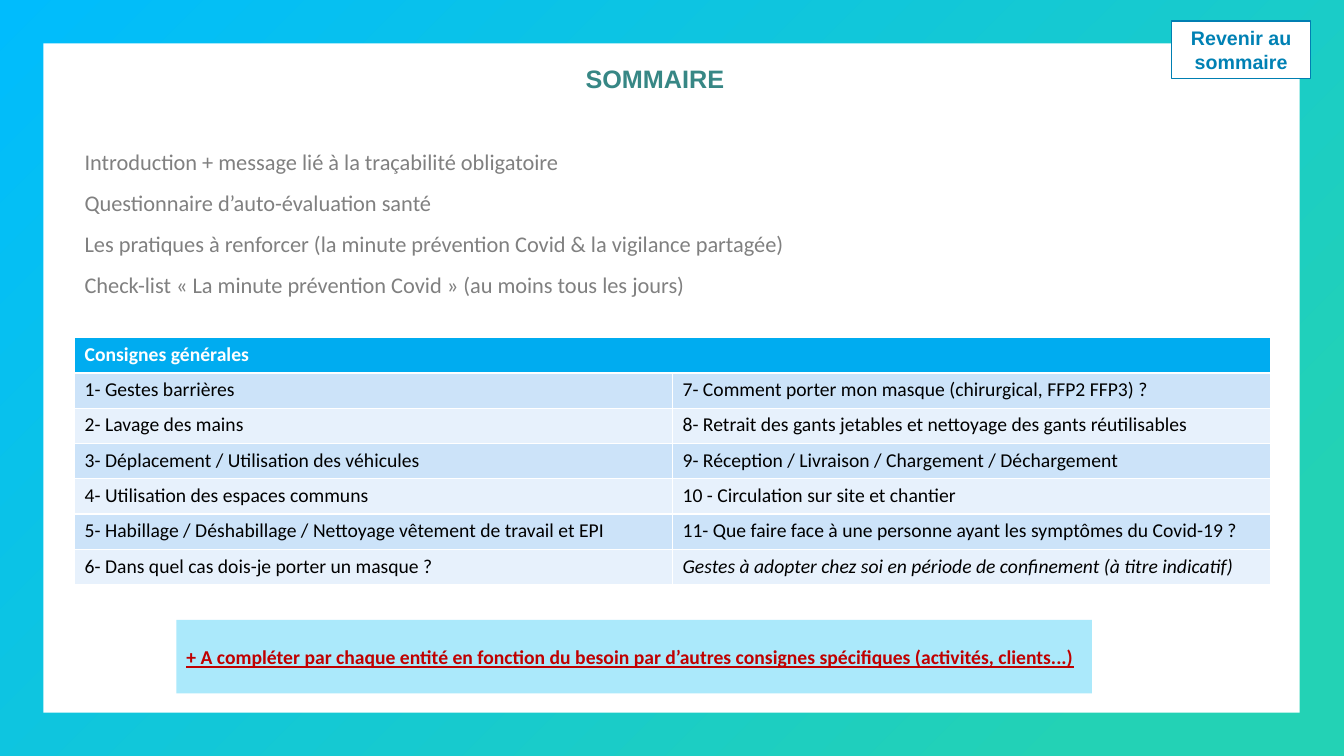
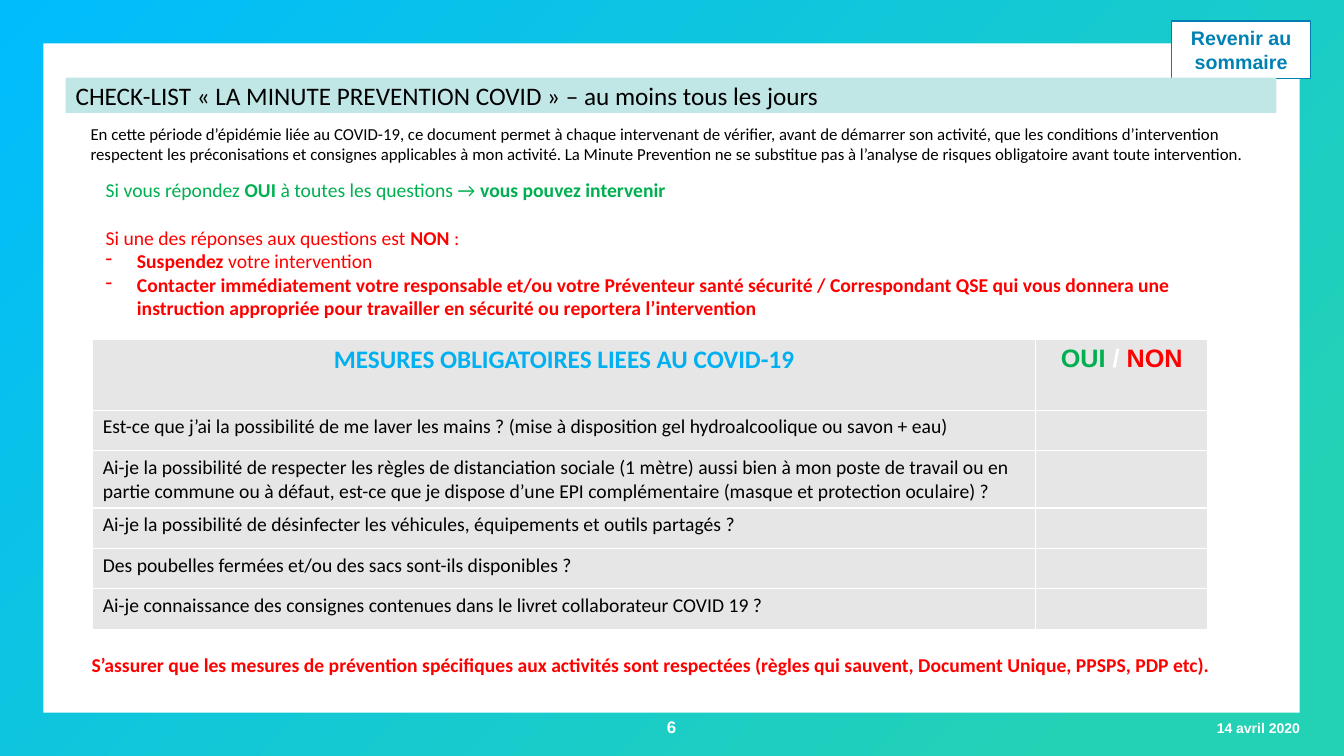
import pptx
import pptx.dml.color
import pptx.enum.shapes
import pptx.enum.text
import pptx.oxml
import pptx.oxml.ns
import pptx.util

Inches = pptx.util.Inches
RGBColor = pptx.dml.color.RGBColor
ALIGN = pptx.enum.text.PP_ALIGN
ANCHOR = pptx.enum.text.MSO_ANCHOR
qn = pptx.oxml.ns.qn
NS = pptx.oxml.ns.nsdecls("a")

BLACK = RGBColor(0x00, 0x00, 0x00)
WHITE = RGBColor(0xFF, 0xFF, 0xFF)
GREY = RGBColor(0x80, 0x80, 0x80)
LIGHT_GREY = RGBColor(0xE7, 0xE6, 0xE6)
FRAME_GREEN = RGBColor(0x23, 0xD2, 0xB5)
FRAME_BLUE = RGBColor(0x00, 0xBC, 0xFD)
BUTTON_LINE = RGBColor(0x00, 0x7F, 0xB2)
BUTTON_TEXT = RGBColor(0x00, 0x81, 0xB4)
TITLE_TEAL = RGBColor(0x37, 0x87, 0x85)
BAND_TEAL = RGBColor(0xC0, 0xE7, 0xE6)
HEADER_BLUE = RGBColor(0x00, 0xAC, 0xF0)
ROW_BLUES = [RGBColor(0xCC, 0xE3, 0xF9), RGBColor(0xE7, 0xF1, 0xFC)]
CALLOUT_BLUE = RGBColor(0x00, 0xBE, 0xF4)
CALLOUT_RED = RGBColor(0xC0, 0x00, 0x00)
HEADING_BLUE = RGBColor(0x00, 0xB0, 0xF0)
GREEN = RGBColor(0x00, 0xB0, 0x50)
RED = RGBColor(0xFF, 0x00, 0x00)


def write(para, text, size=14, font="Calibri", color=BLACK, bold=False, italic=False,
          underline=False, align=ALIGN.LEFT):
    """Add one formatted span to a paragraph."""
    para.alignment = align
    span = para.add_run()
    span.text = text
    span.font.size = pptx.util.Pt(size)
    span.font.name = font
    span.font.color.rgb = color
    span.font.bold = bold
    span.font.italic = italic
    span.font.underline = underline


class StyledDeck:
    """Hold the shared style and the slide being built."""

    def __init__(self):
        """Open a deck and draw the frame on its title-only layout."""
        self.deck = pptx.Presentation()
        self.deck.slide_width = Inches(13.33)
        self.deck.slide_height = Inches(7.5)
        self.layout = self.deck.slide_layouts[5]
        self.page = None

    def new_page(self):
        """Start a slide, moving the frame to the layout the first time."""
        self.page = self.deck.slides.add_slide(self.layout)
        if len(self.deck.slides) == 1:
            self.draw_frame()

    def draw_frame(self):
        """Put the gradient, white panel and button on the layout."""
        border = self.rectangle(0, 0, 13.33, 7.5, FRAME_BLUE)
        border.fill.gradient()
        stops = border.fill.gradient_stops
        for stop, position, color in zip(stops, (0.13, 1), (FRAME_GREEN, FRAME_BLUE)):
            stop.position = position
            stop.color.rgb = color
        gradient = border.element.spPr.find(qn("a:gradFill"))
        gradient.remove(gradient.find(qn("a:lin")))
        gradient.append(pptx.oxml.parse_xml(
            f'<a:path {NS} path="circle"><a:fillToRect l="100000" t="100000"/></a:path>'))
        panel = self.rectangle(0.43, 0.43, 12.46, 6.64, WHITE)
        button = self.rectangle(11.62, 0.21, 1.38, 0.57, WHITE)
        button.line.color.rgb = BUTTON_LINE
        button.line.width = pptx.util.Pt(1)
        write(button.text_frame.paragraphs[0], "Revenir au sommaire", font="Arial",
              color=BUTTON_TEXT, bold=True, align=ALIGN.CENTER)
        for index, shape in enumerate((border, panel, button)):
            shape.element.nvSpPr.cNvPr.set("id", str(101 + index))
            self.layout.shapes.element.insert(2 + index, shape.element)

    def rectangle(self, left, top, width, height, color, opacity=None):
        """Add a plain filled rectangle."""
        box = self.page.shapes.add_shape(
            pptx.enum.shapes.MSO_SHAPE.RECTANGLE,
            Inches(left), Inches(top), Inches(width), Inches(height))
        box.shadow.inherit = False
        box.fill.solid()
        box.fill.fore_color.rgb = color
        box.line.fill.background()
        box.text_frame.word_wrap = True
        box.text_frame.vertical_anchor = ANCHOR.MIDDLE
        if opacity is not None:
            tint = box.element.spPr.find(qn("a:solidFill"))[0]
            tint.append(pptx.oxml.parse_xml(f'<a:alpha {NS} val="{opacity * 1000}"/>'))
        return box

    def title(self, text, left, top, width, height, fill=None, anchor=ANCHOR.TOP, **style):
        """Place and format the title, with an optional band."""
        box = self.page.shapes.title
        box.left, box.top = Inches(left), Inches(top)
        box.width, box.height = Inches(width), Inches(height)
        if fill is not None:
            box.fill.solid()
            box.fill.fore_color.rgb = fill
        frame = box.text_frame
        frame.word_wrap = True
        frame.auto_size = pptx.enum.text.MSO_AUTO_SIZE.NONE
        frame.vertical_anchor = anchor
        write(frame.paragraphs[0], text, size=18, **style)

    def text(self, lines, left, top, width, height, before=0, anchor=ANCHOR.TOP, **style):
        """Add a text box; a line is a string or a list of (text, style) spans."""
        box = self.page.shapes.add_textbox(
            Inches(left), Inches(top), Inches(width), Inches(height))
        frame = box.text_frame
        frame.word_wrap = True
        frame.vertical_anchor = anchor
        for index, line in enumerate(lines):
            para = frame.paragraphs[0] if index == 0 else frame.add_paragraph()
            if index and before:
                para.space_before = pptx.util.Pt(before)
            self.spans(para, line, **style)
        return frame.paragraphs

    def spans(self, para, line, **style):
        """Write a line, letting each span override the common style."""
        for text, override in [(line, {})] if isinstance(line, str) else line:
            write(para, text, **{**style, **override})

    def bullet(self, para, mark="-", indent=0.31):
        """Give a paragraph a hanging bullet."""
        properties = para._p.get_or_add_pPr()
        properties.set("marL", str(Inches(indent)))
        properties.set("indent", str(-Inches(indent)))
        properties.append(pptx.oxml.parse_xml(f'<a:buChar {NS} char="{mark}"/>'))

    def table(self, rows, left, top, widths, heights, header_fill, row_fills):
        """Add a table with a header fill and cycling row fills."""
        table = self.page.shapes.add_table(
            len(rows), len(widths), Inches(left), Inches(top),
            Inches(sum(widths)), Inches(sum(heights))).table
        for column, width in zip(table.columns, widths):
            column.width = Inches(width)
        for row, height in zip(table.rows, heights):
            row.height = Inches(height)
        for number, lines in enumerate(rows):
            fill = row_fills[(number - 1) % len(row_fills)] if number else header_fill
            for cell, line in zip(table.rows[number].cells, lines):
                cell.fill.solid()
                cell.fill.fore_color.rgb = fill
                if line:
                    self.spans(cell.text_frame.paragraphs[0], line)
        return table

    def footer(self, number, date):
        """Add the page number and date below the panel."""
        common = {"font": "Arial", "color": WHITE, "bold": True, "anchor": ANCHOR.MIDDLE}
        self.text([date], 7.38, 7.09, 5.61, 0.27, size=10, align=ALIGN.RIGHT, **common)
        self.text([number], 5.16, 7.06, 3, 0.31, size=12, align=ALIGN.CENTER, **common)


def build_summary(deck):
    """Build the table of contents slide."""
    deck.new_page()
    deck.title("SOMMAIRE", 0.49, 0.58, 12.01, 0.39, font="Arial", color=TITLE_TEAL,
               bold=True, align=ALIGN.CENTER)
    deck.text([
        "Introduction + message lié à la traçabilité obligatoire",
        "Questionnaire d’auto-évaluation santé",
        "Les pratiques à renforcer (la minute prévention Covid & la vigilance partagée)",
        "Check-list « La minute prévention Covid » (au moins tous les jours)",
    ], 0.74, 1.42, 10.09, 1.6, before=10, size=16, color=GREY)
    rows = [
        ([("Consignes générales", {"color": WHITE, "bold": True})], ""),
        ("1- Gestes barrières", "7- Comment porter mon masque (chirurgical, FFP2 FFP3) ?"),
        ("2- Lavage des mains",
         "8- Retrait des gants jetables et nettoyage des gants réutilisables"),
        ("3- Déplacement / Utilisation des véhicules",
         "9- Réception / Livraison / Chargement / Déchargement"),
        ("4- Utilisation des espaces communs", "10 - Circulation sur site et chantier"),
        ("5- Habillage / Déshabillage / Nettoyage vêtement de travail et EPI",
         "11- Que faire face à une personne ayant les symptômes du Covid-19 ?"),
        ("6- Dans quel cas dois-je porter un masque ?",
         [("Gestes à adopter chez soi en période de confinement (à titre indicatif)",
           {"italic": True})]),
    ]
    table = deck.table(rows, 0.74, 3.35, [5.93] * 2, [0.35] * 7, HEADER_BLUE, ROW_BLUES)
    table.cell(0, 0).merge(table.cell(0, 1))
    callout = deck.rectangle(1.75, 6.15, 9.08, 0.73, CALLOUT_BLUE, opacity=33)
    write(callout.text_frame.paragraphs[0],
          "+ A compléter par chaque entité en fonction du besoin par d’autres consignes "
          "spécifiques (activités, clients...)",
          color=CALLOUT_RED, bold=True, underline=True)


def build_checklist(deck):
    """Build the daily checklist slide."""
    bold = {"bold": True}
    red = {"color": RED}
    red_bold = {**red, **bold}
    deck.new_page()
    deck.title("CHECK-LIST « LA MINUTE PREVENTION COVID » – au moins tous les jours",
               0.65, 0.77, 12.01, 0.35, fill=BAND_TEAL, anchor=ANCHOR.MIDDLE)
    deck.text([
        "En cette période d’épidémie liée au COVID-19, ce document permet à chaque intervenant "
        "de vérifier, avant de démarrer son activité, que les conditions d’intervention "
        "respectent les préconisations et consignes applicables à mon activité. La Minute "
        "Prevention ne se substitue pas à l’analyse de risques obligatoire avant toute "
        "intervention."], 0.8, 1.18, 11.7, 0.5, size=12)
    paras = deck.text([
        [("Si vous répondez", {}), (" OUI ", bold), ("à toutes les questions → ", {}),
         ("vous pouvez intervenir", bold)],
        [("Si une des réponses aux questions est ", red), ("NON", red_bold), (" :", red)],
        [("Suspendez ", red_bold), ("votre intervention", red)],
        [("Contacter immédiatement votre responsable et/ou votre Préventeur santé sécurité / "
          "Correspondant QSE qui vous donnera une instruction appropriée pour travailler en "
          "sécurité ou reportera l’intervention", red_bold)],
    ], 0.95, 1.72, 11.17, 1.51, color=GREEN)
    paras[1].space_before = pptx.util.Pt(17)
    for para in paras[2:]:
        deck.bullet(para)
    heading = {"size": 18, "bold": True, "align": ALIGN.CENTER}
    answer = {**heading, "font": "Arial"}
    questions = [
        "Est-ce que j’ai la possibilité de me laver les mains ? (mise à disposition gel "
        "hydroalcoolique ou savon + eau)",
        "Ai-je la possibilité de respecter les règles de distanciation sociale (1 mètre) aussi "
        "bien à mon poste de travail ou en partie commune ou à défaut, est-ce que je dispose "
        "d’une EPI complémentaire (masque et protection oculaire) ?",
        "Ai-je la possibilité de désinfecter les véhicules, équipements et outils partagés ?",
        "Des poubelles fermées et/ou des sacs sont-ils disponibles ?",
        "Ai-je connaissance des consignes contenues dans le livret collaborateur COVID 19 ?",
    ]
    header = ([("MESURES OBLIGATOIRES LIEES AU COVID-19", {**heading, "color": HEADING_BLUE})],
              [("OUI ", {**answer, "color": GREEN}), ("/ ", {**answer, "color": WHITE}),
               ("NON", {**answer, "color": RED})])
    deck.table([header] + [(question, "") for question in questions], 0.92, 3.37,
               [9.35, 1.71], [0.7, 0.4, 0.57, 0.4, 0.4, 0.4], LIGHT_GREY, [LIGHT_GREY])
    deck.text([
        "S’assurer que les mesures de prévention spécifiques aux activités sont respectées "
        "(règles qui sauvent, Document Unique, PPSPS, PDP etc)."],
        0.81, 6.43, 11.7, 0.34, **red_bold)
    deck.footer("6", "14 avril 2020")


def main():
    """Build and save the deck."""
    deck = StyledDeck()
    build_summary(deck)
    build_checklist(deck)
    deck.deck.save("out.pptx")


if __name__ == "__main__":
    main()
